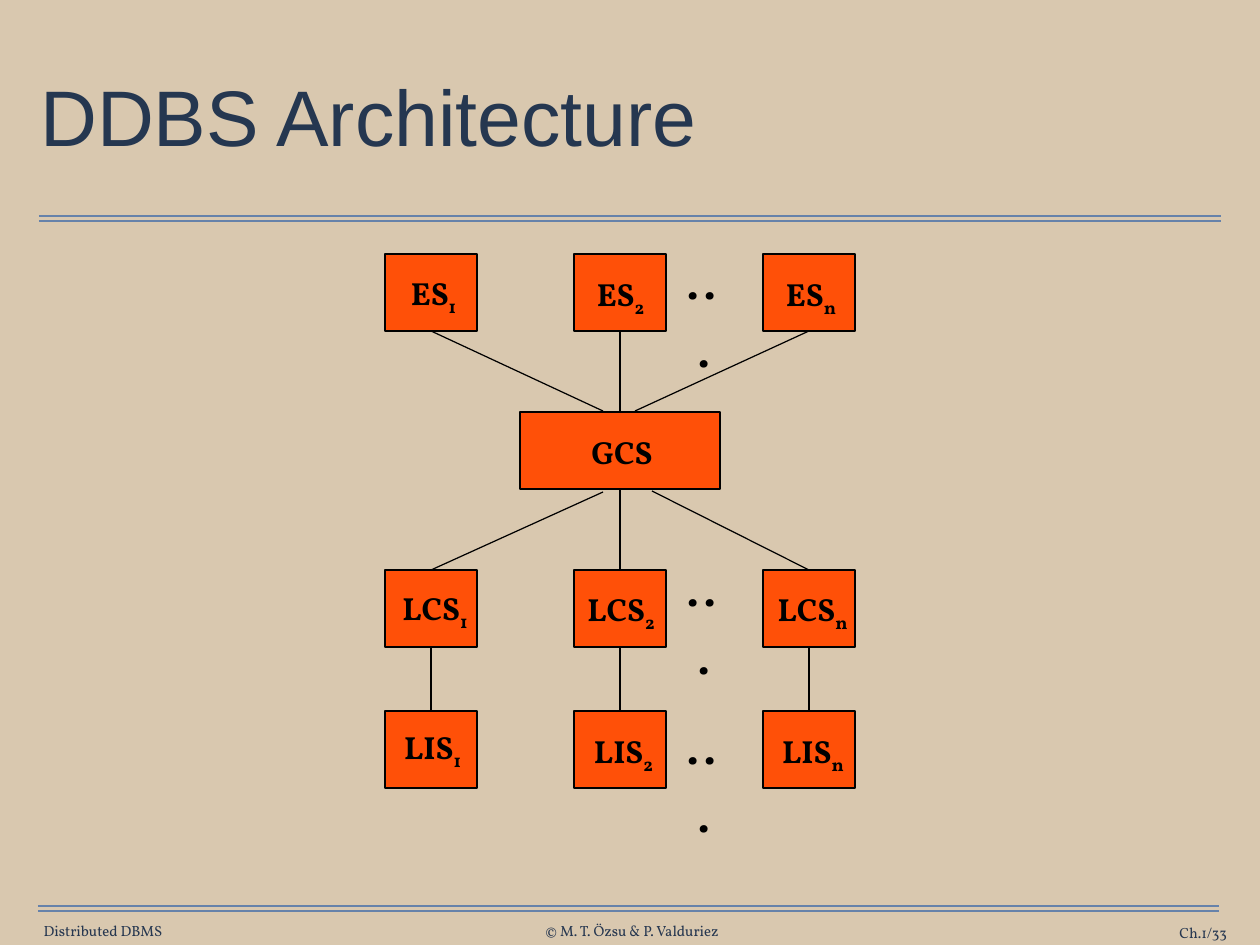
"""Build the DDBS Architecture slide."""
import pptx
import pptx.dml.color
import pptx.enum.shapes
import pptx.enum.text
import pptx.oxml.xmlchemy
import pptx.util

EMU_PER_PX = 10320
SLIDE_SIZE = (1260, 945)

RGBColor = pptx.dml.color.RGBColor
SAND = RGBColor(0xD9, 0xC8, 0xAF)
ORANGE = RGBColor(0xFF, 0x50, 0x08)
BLACK = RGBColor(0, 0, 0)
RULE_BLUE = RGBColor(0x66, 0x82, 0xAA)
TITLE_NAVY = RGBColor(0x25, 0x37, 0x50)
FOOTER_NAVY = RGBColor(0x26, 0x37, 0x50)

Align = pptx.enum.text.PP_ALIGN
Anchor = pptx.enum.text.MSO_ANCHOR
TOP_SIDE, BOTTOM_SIDE = 0, 2

TITLE = "DDBS Architecture"
FOOTERS = [
    ("Distributed DBMS", (42, 922, 122, 18), Align.CENTER, False),
    ("© M. T. Özsu & P. Valduriez", (540, 922, 184, 18), Align.CENTER, False),
    ("Ch.1/33", (1091, 924, 136, 18), Align.RIGHT, True),
]
RULES = [(39, 1221, 216), (39, 1221, 221), (38, 1219, 906), (38, 1219, 911)]

BOX_LEFT, BOX_STEP, BOX_WIDTH, BOX_HEIGHT = 385, 189, 92, 77
ROW_TOPS = {"ES": 254, "LCS": 570, "LIS": 711}
GCS_BOX = (520, 412, 200, BOX_HEIGHT)
LABEL_HEIGHT = 51
LABELS = {
    "ES": [("1", 395, 267, 77), ("2", 582, 268, 77), ("n", 771, 268, 80)],
    "GCS": [("", 573, 426, 98)],
    "LCS": [("1", 385, 582, 100), ("2", 571, 583, 100), ("n", 761, 583, 103)],
    "LIS": [("1", 388, 721, 89), ("2", 579, 725, 89), ("n", 767, 725, 92)],
}
SLANTS = [
    ("ES", 0, BOTTOM_SIDE, (603, 411)),
    ("ES", 2, BOTTOM_SIDE, (635, 411)),
    ("LCS", 0, TOP_SIDE, (603, 492)),
    ("LCS", 2, TOP_SIDE, (652, 491)),
]
DOTS_LEFT, DOTS_WIDTH, DOTS_HEIGHT = 670, 68, 81
DOTS_TOPS = [237, 544, 702]


def px(*values):
    return [pptx.util.Emu(value * EMU_PER_PX) for value in values]


def add_line(slide, start, end, color):
    line = slide.shapes.add_connector(
        pptx.enum.shapes.MSO_CONNECTOR.STRAIGHT, *px(*start, *end))
    line.line.color.rgb = color
    line.line.width = pptx.util.Pt(1)
    line._element.spPr.append(pptx.oxml.xmlchemy.OxmlElement("a:effectLst"))
    return line


def add_box(slide, bounds):
    box = slide.shapes.add_shape(
        pptx.enum.shapes.MSO_SHAPE.RECTANGLE, *px(*bounds))
    box.shadow.inherit = False
    box.fill.solid()
    box.fill.fore_color.rgb = ORANGE
    box.line.color.rgb = BLACK
    box.line.width = pptx.util.Pt(1)
    return box


def add_text(slide, bounds, text, size, color, align, insets=(0, 0), font="Vollkorn",
             bold=False, subscript="", wrap=False, anchor=Anchor.TOP):
    frame = slide.shapes.add_textbox(*px(*bounds)).text_frame
    frame.word_wrap = wrap
    if not wrap:
        frame.auto_size = pptx.enum.text.MSO_AUTO_SIZE.SHAPE_TO_FIT_TEXT
    frame.vertical_anchor = anchor
    frame.margin_left = frame.margin_right = pptx.util.Inches(insets[0])
    frame.margin_top = frame.margin_bottom = pptx.util.Inches(insets[1])
    paragraph = frame.paragraphs[0]
    paragraph.alignment = align
    for content, baseline in ((text, None), (subscript, "-25000")):
        if not content:
            continue
        run = paragraph.add_run()
        run.text = content
        run.font.size = pptx.util.Pt(size)
        run.font.name = font
        run.font.bold = bold
        run.font.color.rgb = color
        if baseline:
            run._r.get_or_add_rPr().set("baseline", baseline)
    return paragraph


def join(slide, upper, lower):
    line = add_line(slide, (0, 0), (0, 0), BLACK)
    line.begin_connect(upper, BOTTOM_SIDE)
    line.end_connect(lower, TOP_SIDE)


def add_diagram(slide):
    boxes = {
        row: [add_box(slide, (BOX_LEFT + column * BOX_STEP, top, BOX_WIDTH, BOX_HEIGHT))
              for column in range(3)]
        for row, top in ROW_TOPS.items()
    }
    gcs = add_box(slide, GCS_BOX)

    for row, column, side, gcs_point in SLANTS:
        line = add_line(slide, gcs_point, gcs_point, BLACK)
        line.end_connect(boxes[row][column], side)
    join(slide, boxes["ES"][1], gcs)
    join(slide, gcs, boxes["LCS"][1])
    for upper, lower in zip(boxes["LCS"], boxes["LIS"]):
        join(slide, upper, lower)

    for top in DOTS_TOPS:
        add_text(slide, (DOTS_LEFT, top, DOTS_WIDTH, DOTS_HEIGHT), "...", 46, BLACK,
                 Align.CENTER, insets=(0.14, 0.07), wrap=True)
    for name, places in LABELS.items():
        for subscript, left, top, width in places:
            add_text(slide, (left, top, width, LABEL_HEIGHT), name, 26, BLACK,
                     Align.CENTER, insets=(0.14, 0.07), bold=True, subscript=subscript)


def main():
    presentation = pptx.Presentation()
    presentation.slide_width, presentation.slide_height = px(*SLIDE_SIZE)
    slide = presentation.slides.add_slide(presentation.slide_layouts[6])
    slide.background.fill.solid()
    slide.background.fill.fore_color.rgb = SAND

    for left, right, y in RULES:
        add_line(slide, (left, y), (right, y), RULE_BLUE)
    for text, bounds, align, wrap in FOOTERS:
        add_text(slide, bounds, text, 12, FOOTER_NAVY, align, wrap=wrap,
                 anchor=Anchor.MIDDLE)
    title = add_text(slide, (35, 43, 1191, 156), TITLE, 64, TITLE_NAVY, Align.LEFT,
                     insets=(0.06, 0.06), font="Arial", wrap=True, anchor=Anchor.MIDDLE)
    title.line_spacing = 0.9
    add_diagram(slide)
    presentation.save("out.pptx")


if __name__ == "__main__":
    main()
